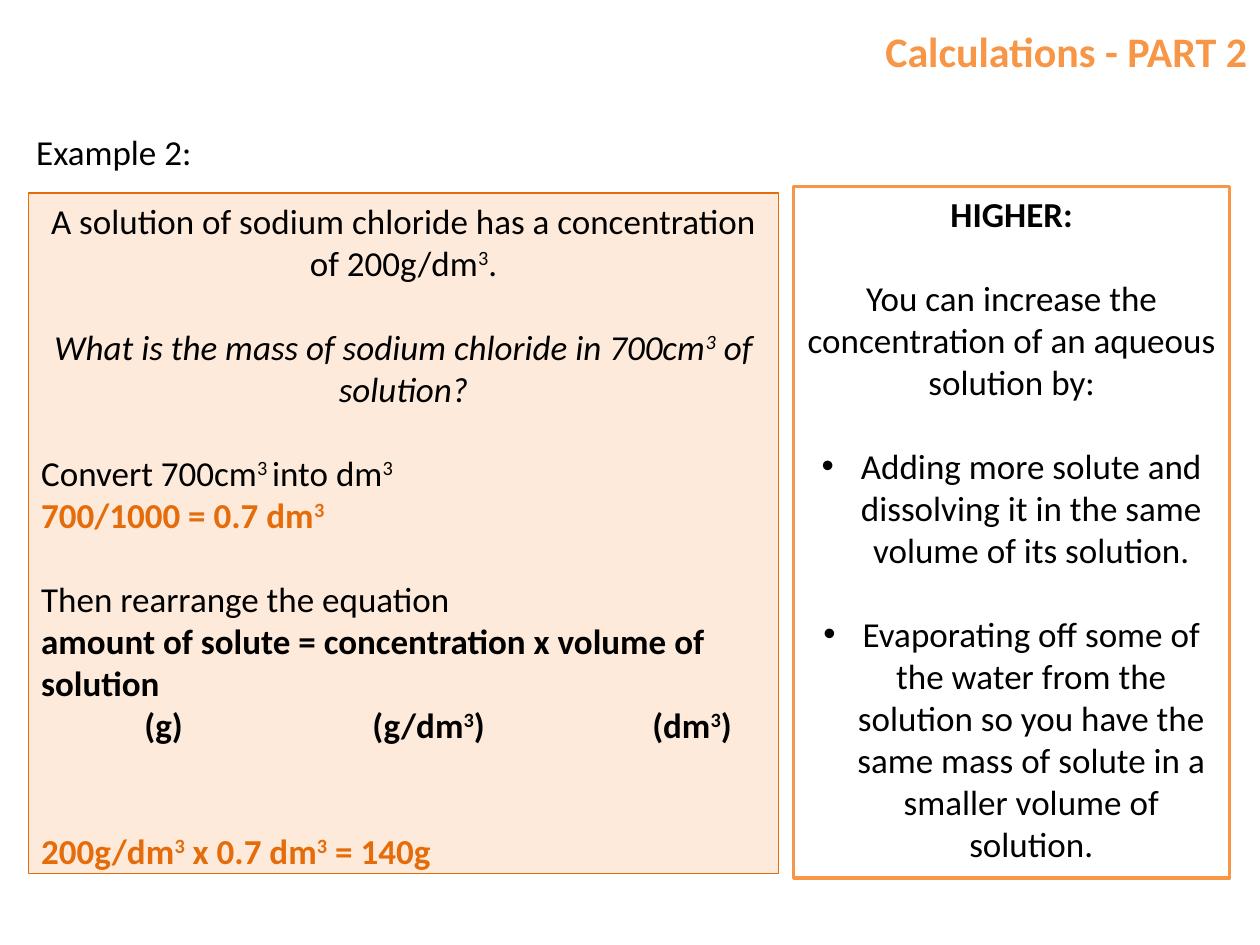
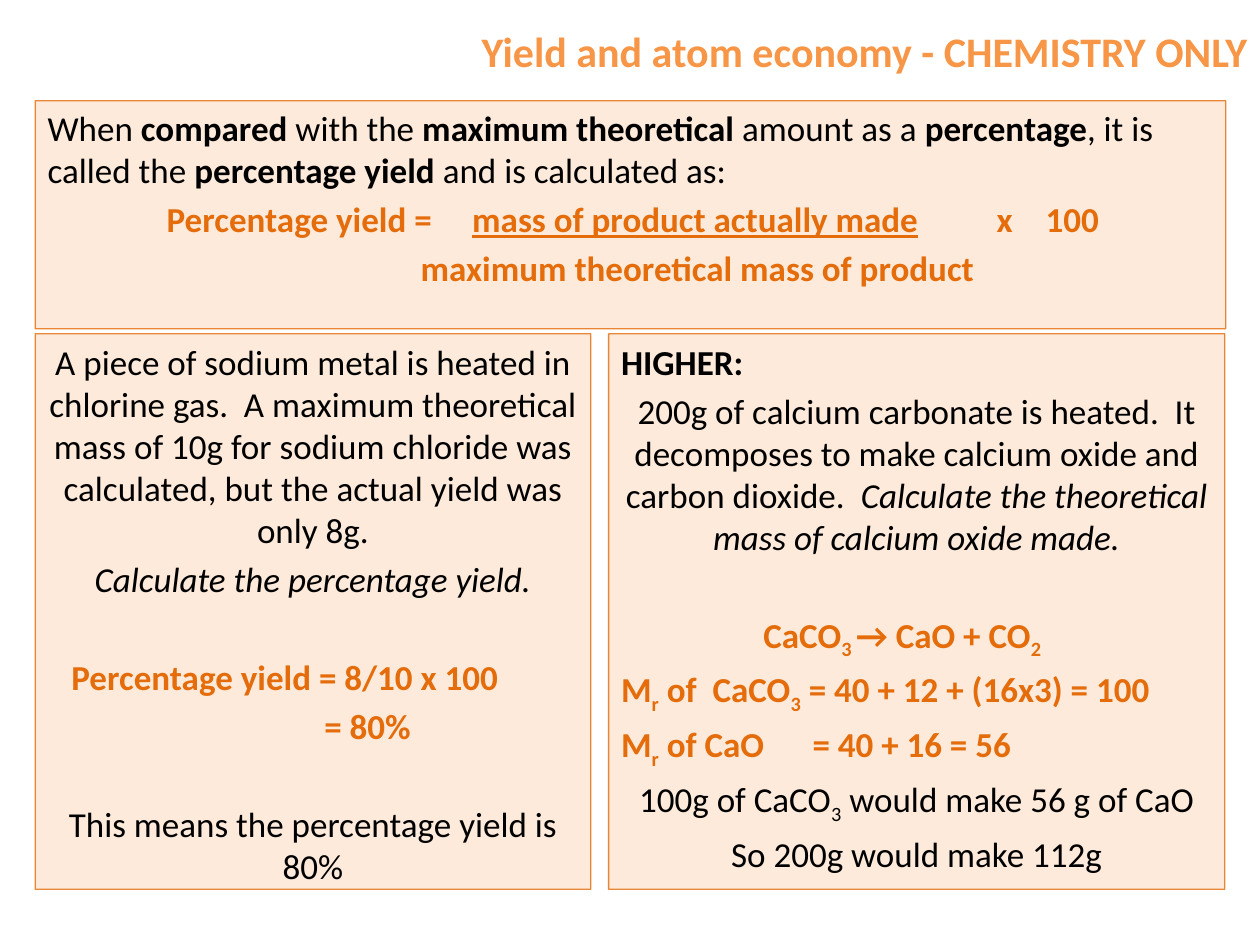
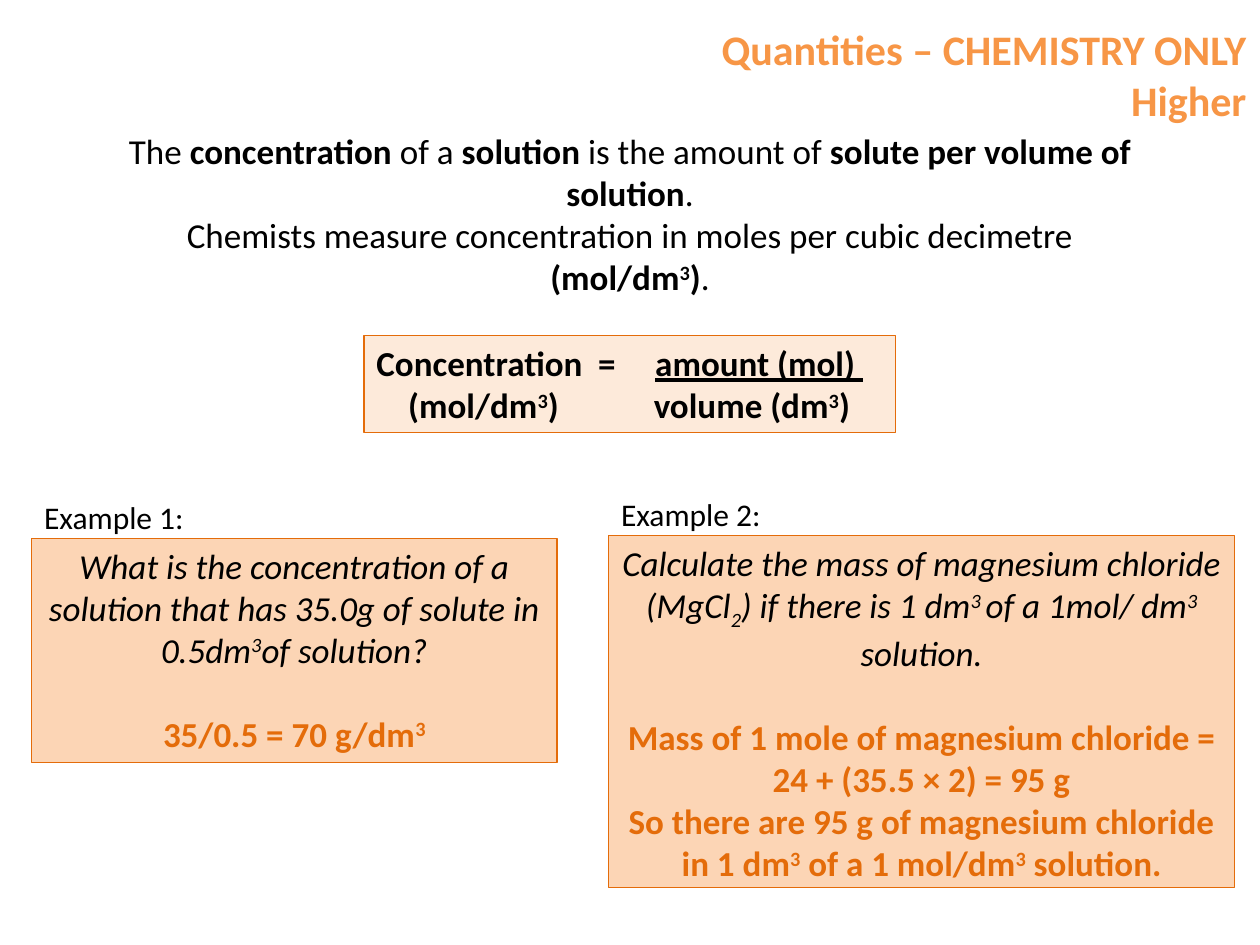
from dataclasses import dataclass

from lxml.etree import SubElement
from pptx import Presentation
from pptx.dml.color import RGBColor
from pptx.enum.shapes import MSO_SHAPE as Shape
from pptx.enum.text import MSO_ANCHOR as Anchor, MSO_AUTO_SIZE as AutoSize, PP_ALIGN as Align
from pptx.oxml.ns import qn
from pptx.util import Cm, Pt

COLORS = {
    "title": "F79646",
    "accent": "E46C0A",
    "text": "000000",
    "pale": "FDEADA",
    "peach": "FCD5B5",
    "white": "FFFFFF",
}
FONT = "Calibri"
TITLE_AREA = (1.7, 0.1, 23.7, 1.83)
BLANK_LINE = 24
STEP = 4  # spacing of the yield paragraphs
STEP_AND_LINE = BLANK_LINE + 2 * STEP

# Each mark switches one format on or off inside a line of text.
MARKS = {"*": "bold", "~": "italic", "`": "underline",
         "^": "superscript", "_": "subscript", "#": "accent"}
BASELINES = {"superscript": "30000", "subscript": "-25000"}


@dataclass
class Line:
    text: str
    gap: float = 0
    align: Align = Align.LEFT
    tabs: tuple = ()
    bullet: bool = False


def centred(text, gap=0, **options):
    return Line(text, gap, Align.CENTER, **options)


def rgb(name):
    return RGBColor.from_string(COLORS[name])


def add_run(paragraph, text, active, size, color="text"):
    run = paragraph.add_run()
    run.text = text
    accent = "accent" in active
    formats = {"name": FONT, "size": Pt(size), "bold": accent or "bold" in active,
               "italic": "italic" in active, "underline": "underline" in active}
    for attribute, value in formats.items():
        setattr(run.font, attribute, value)
    run.font.color.rgb = rgb("accent" if accent else color)
    for level, baseline in BASELINES.items():
        if level in active:
            run.font._element.set("baseline", baseline)


def add_marked_runs(paragraph, text, size):
    """Split the text at its marks and add one run for each format."""
    active, piece = set(), ""
    for letter in text:
        if letter in MARKS:
            if piece:
                add_run(paragraph, piece, active, size)
            piece = ""
            active ^= {MARKS[letter]}
        else:
            piece += letter
    if piece:
        add_run(paragraph, piece, active, size)


def add_bullet(properties):
    indent = Cm(0.79)
    properties.set("marL", str(indent))
    properties.set("indent", str(-indent))
    SubElement(properties, qn("a:buFont"), typeface="Arial")
    SubElement(properties, qn("a:buChar"), char="•")


def add_tabs(properties, stops):
    tab_list = SubElement(properties, qn("a:tabLst"))
    for stop in stops:
        SubElement(tab_list, qn("a:tab"), pos=str(Cm(stop)), algn="l")


def write_lines(frame, lines, size=20):
    for index, line in enumerate(lines):
        paragraph = frame.add_paragraph() if index else frame.paragraphs[0]
        paragraph.alignment = line.align
        if line.gap:
            paragraph.space_before = Pt(line.gap)
        properties = paragraph._p.get_or_add_pPr()
        if line.bullet:
            add_bullet(properties)
        if line.tabs:
            add_tabs(properties, line.tabs)
        add_marked_runs(paragraph, line.text, size)


def add_panel(slide, area, lines, fill="pale", border="accent", width=0.75, opacity=None):
    panel = slide.shapes.add_shape(Shape.RECTANGLE, *map(Cm, area))
    panel.shadow.inherit = False
    if fill:
        panel.fill.solid()
        panel.fill.fore_color.rgb = rgb(fill)
    else:
        panel.fill.background()
    panel.line.color.rgb = rgb(border)
    panel.line.width = Pt(width)
    if opacity:
        border_color = panel.line._ln.find(".//" + qn("a:srgbClr"))
        SubElement(border_color, qn("a:alpha"), val=str(opacity * 1000))
    frame = panel.text_frame
    frame.word_wrap = True
    frame.vertical_anchor = Anchor.TOP
    write_lines(frame, lines)


def add_label(slide, area, text, size):
    label = slide.shapes.add_textbox(*map(Cm, area))
    label.text_frame.word_wrap = False
    write_lines(label.text_frame, [Line(text)], size)


def add_titled_slide(deck, *title_lines, area=TITLE_AREA):
    slide = deck.slides.add_slide(deck.slide_layouts[5])
    title = slide.shapes.title
    for side, length in zip(("left", "top", "width", "height"), area):
        setattr(title, side, Cm(length))
    frame = title.text_frame
    frame.auto_size = AutoSize.NONE
    frame.vertical_anchor = Anchor.MIDDLE
    for index, text in enumerate(title_lines):
        paragraph = frame.add_paragraph() if index else frame.paragraphs[0]
        paragraph.alignment = Align.RIGHT
        paragraph.space_before = Pt(0)
        add_run(paragraph, text, {"bold"}, 24, "title")
    return slide


def build_calculations(deck):
    slide = add_titled_slide(deck, "Calculations - PART 2")
    add_panel(slide, (16, 3.76, 8.79, 13.94), [
        centred("*HIGHER:*"),
        centred("You can increase the concentration of an aqueous solution by:", BLANK_LINE),
        centred("Adding more solute and dissolving it in the same volume of its solution.",
                BLANK_LINE, bullet=True),
        centred("Evaporating off some of the water from the solution so you have the same "
                "mass of solute in a smaller volume of solution.", BLANK_LINE, bullet=True),
    ], fill="white", border="title", width=2)
    add_panel(slide, (0.58, 3.89, 15.11, 13.72), [
        centred("A solution of sodium chloride has a concentration of 200g/dm^3^."),
        centred("~What is the mass of sodium chloride in 700cm^3^ of solution?~", BLANK_LINE),
        Line("Convert 700cm^3 ^into dm^3^", BLANK_LINE),
        Line("#700/1000 = 0.7 dm^3^#"),
        Line("Then rearrange the equation", BLANK_LINE),
        Line("*amount of solute = concentration x volume of solution*"),
        Line("*\t(g)\t(g/dm^3^)\t(dm^3^)*", tabs=(2.08, 6.68, 12.32)),
        Line("#200g/dm^3^ x 0.7 dm^3^ = 140g#", 2 * BLANK_LINE),
    ])
    add_label(slide, (0.48, 2.51, 3.68, 1.12), "Example 2:", 20)


def build_yield(deck):
    slide = add_titled_slide(deck, "Yield and atom economy - CHEMISTRY ONLY")
    left, top, right = 0.71, 6.73, 12.27
    add_panel(slide, (left, 2.03, 24, 4.6), [
        Line("When *compared* with the *maximum theoretical* amount as a *percentage*, "
             "it is called the *percentage yield* and is calculated as:"),
        Line("#\tPercentage yield = `\tmass of product actually made\t`\tx\t100#", STEP,
             tabs=(2.4, 8.56, 18.66, 19.13, 20.12)),
        Line("#\tmaximum theoretical mass of product#", STEP, tabs=(7.52,)),
    ], opacity=80)
    add_panel(slide, (left, top, 11.2, 11.2), [
        centred("A piece of sodium metal is heated in chlorine gas.  A maximum theoretical "
                "mass of 10g for sodium chloride was calculated, but the actual yield was "
                "only 8g."),
        centred("~Calculate the percentage yield.~", STEP),
        Line("#\tPercentage yield = 8/10 x 100#", STEP_AND_LINE, tabs=(0.48,)),
        Line("#\t= 80%#", STEP, tabs=(5.58,)),
        centred("This means the percentage yield is 80%", STEP_AND_LINE),
    ], opacity=80)
    add_panel(slide, (right, top, 12.42, 11.2), [
        Line("*HIGHER:*"),
        centred("200g of calcium carbonate is heated.  It decomposes to make calcium oxide "
                "and carbon dioxide.  ~Calculate the theoretical mass of calcium oxide "
                "made.~", STEP),
        Line("#\tCaCO_3 _→ CaO + CO_2_#", STEP_AND_LINE, tabs=(2.87,)),
        Line("#M_r_ of  CaCO_3_ = 40 + 12 + (16x3) = 100#", STEP),
        Line("#M_r_ of CaO\t= 40 + 16 = 56#", STEP, tabs=(3.86,)),
        centred("100g of CaCO_3_ would make 56 g of CaO", STEP),
        centred("So 200g would make 112g", STEP),
    ], opacity=80)


def build_quantities(deck):
    slide = add_titled_slide(deck, "Quantities – CHEMISTRY ONLY", "Higher",
                             area=(1.68, 0.58, 23.7, 1.83))
    left, right = 0.64, 12.27
    add_panel(slide, (1.83, 2.49, 21.74, 4.44), [
        centred("The *concentration* of a *solution* is the amount of "
                "*solute per volume of solution*."),
        centred("Chemists measure concentration in moles per cubic decimetre "
                "*(mol/dm^3^)*."),
    ], fill=None, border="white")
    add_panel(slide, (left, 10.85, 10.59, 4.52), [
        centred("~What is the concentration of a solution that has 35.0g of solute in "
                "0.5dm^3^of solution?~"),
        centred("#35/0.5 = 70 g/dm^3^#", BLANK_LINE),
    ], fill="peach")
    add_label(slide, (left, 9.91, 3.35, 1.02), "Example 1:", 18)
    add_label(slide, (right, 9.86, 3.35, 1.02), "Example 2:", 18)
    add_panel(slide, (right, 10.8, 12.62, 7.09), [
        centred("~Calculate the mass of magnesium chloride (MgCl_2_) if there is 1 dm^3 ^"
                "of a 1mol/ dm^3 ^solution.~"),
        centred("#Mass of 1 mole of magnesium chloride = 24 + (35.5 × 2) = 95 g#", BLANK_LINE),
        centred("#So there are 95 g of magnesium chloride in 1 dm^3^ of a 1 mol/dm^3^ "
                "solution.#"),
    ], fill="peach")
    add_panel(slide, (7.34, 6.76, 10.72, 1.96), [
        Line("*Concentration  =\t`amount (mol) `*", tabs=(5.62,)),
        Line("*\t(mol/dm^3^)\tvolume (dm^3^)*", tabs=(0.64, 5.59)),
    ])


def main():
    deck = Presentation()
    deck.slide_width, deck.slide_height = Cm(25.4), Cm(19.05)
    build_calculations(deck)
    build_yield(deck)
    build_quantities(deck)
    deck.save("out.pptx")


if __name__ == "__main__":
    main()
